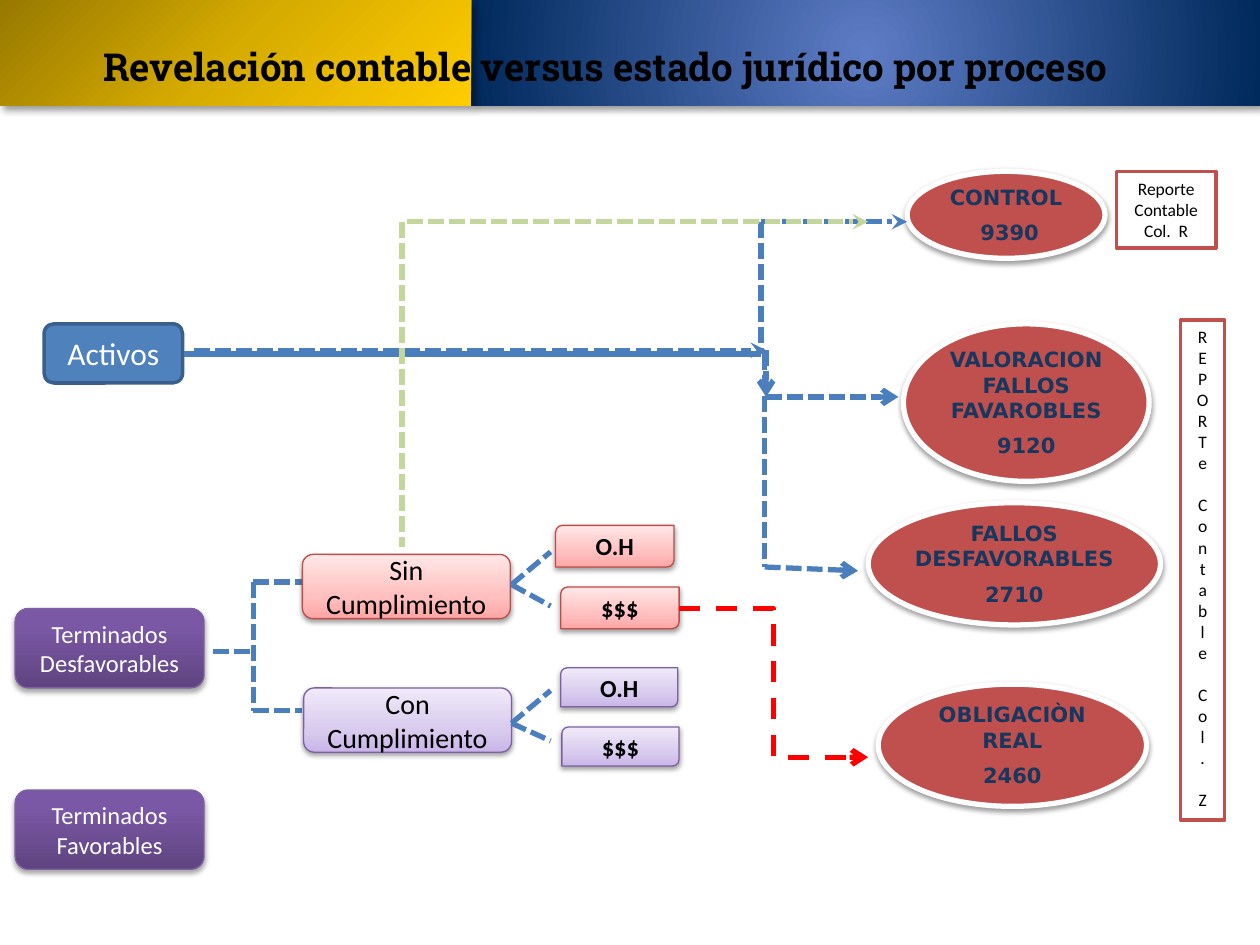
from lxml import etree
from pptx import Presentation
from pptx import util as u
from pptx.dml.color import RGBColor
from pptx.enum import dml, shapes, text
from pptx.oxml.ns import qn

KIND = shapes.MSO_SHAPE
BLUE, GREEN, RED, NAVY, BRICK, PURPLE = "4B7EBC", "C3D69B", "FF0000", "17375E", "C0504D", "7D60A0"
BLACK, WHITE = "000000", "FFFFFF"
PURPLE_FADE = [(0, "5F4480"), (80, "7B58A6"), (100, "7C57A8")]
ROSE_FADE = [(0, "FFA6A5"), (35, "FFC0BF"), (100, "FFE7E7")]
LILAC_FADE = [(0, "C9B5E8"), (35, "D8CBEE"), (100, "F0EAF9")]
SOFT_SHADOW = (38, 3.1, 1.6, 90)  # opacity %, blur pt, distance pt, angle
BAND_SHADOW = (40, 4, 3, 45)


def color(value):
    return RGBColor.from_string(value)


def add_xml(parent, tag, **attributes):
    return etree.SubElement(parent, qn(tag), {key: str(value) for key, value in attributes.items()})


class Diagram:
    font = "Calibri"

    def __init__(self, presentation):
        self.slide = presentation.slides.add_slide(presentation.slide_layouts[5])

    def fade(self, shape, stops, focus=None):
        """Gradient fill: upward, or circular around focus (l, t, r, b in %)."""
        shape.fill.gradient()
        gradient = shape._element.spPr.find(qn("a:gradFill"))
        gradient.clear()
        stop_list = add_xml(gradient, "a:gsLst")
        for position, value in stops:
            stop = add_xml(stop_list, "a:gs", pos=position * 1000)
            add_xml(stop, "a:srgbClr", val=value)
        if focus is None:
            add_xml(gradient, "a:lin", ang=270 * 60000, scaled=0)
        else:
            circle = add_xml(gradient, "a:path", path="circle")
            sides = {side: part * 1000 for side, part in zip("ltrb", focus)}
            add_xml(circle, "a:fillToRect", **sides)

    def shadow(self, shape, opacity, blur, distance, angle):
        effects = shape._element.spPr.find(qn("a:effectLst"))
        outer = add_xml(effects, "a:outerShdw", blurRad=int(u.Pt(blur)), dist=int(u.Pt(distance)),
                        dir=angle * 60000, rotWithShape=0)
        add_xml(add_xml(outer, "a:srgbClr", val=BLACK), "a:alpha", val=opacity * 1000)

    def box(self, kind, place, fill, line=None, width=0.75, shadow=None, focus=None):
        shape = self.slide.shapes.add_shape(kind, *map(u.Inches, place))
        shape.shadow.inherit = False
        if isinstance(fill, str):
            shape.fill.solid()
            shape.fill.fore_color.rgb = color(fill)
        else:
            self.fade(shape, fill, focus)
        if line:
            shape.line.color.rgb = color(line)
            shape.line.width = u.Pt(width)
        else:
            shape.line.fill.background()
        if shadow:
            self.shadow(shape, *shadow)
        return shape

    def label(self, shape, lines, size, ink, bold=False, font=None, middle=True, gaps=None, inset=None):
        """One paragraph per line; gaps maps a line number to its space before."""
        frame = shape.text_frame
        frame.word_wrap = True
        frame.auto_size = text.MSO_AUTO_SIZE.NONE
        frame.vertical_anchor = text.MSO_ANCHOR.MIDDLE if middle else text.MSO_ANCHOR.TOP
        if inset is not None:
            frame.margin_left = frame.margin_right = u.Inches(inset)
            frame.margin_top = frame.margin_bottom = u.Inches(inset)
        for number, line in enumerate(lines):
            paragraph = frame.add_paragraph() if number else frame.paragraphs[0]
            paragraph.alignment = text.PP_ALIGN.CENTER
            if gaps and number in gaps:
                paragraph.space_before = u.Pt(gaps[number])
            run = paragraph.add_run()
            run.text = line
            run.font.name = font or self.font
            run.font.size = u.Pt(size)
            run.font.bold = bold
            run.font.color.rgb = color(ink)

    def title(self, words):
        """Title placeholder, brought in front of the header bands."""
        shape = self.slide.shapes.title
        shape.left, shape.top, shape.width, shape.height = map(u.Inches, (0.72, 0.29, 9.28, 0.47))
        self.label(shape, [words], 22, BLACK, bold=True, font="Roboto Slab", middle=False)
        shape.text_frame.paragraphs[0].alignment = text.PP_ALIGN.LEFT
        self.slide.shapes._spTree.append(shape._element)

    def account(self, place, name, code):
        shape = self.box(KIND.OVAL, place, BRICK, WHITE, 3, SOFT_SHADOW)
        self.label(shape, [name, code], 12, NAVY, True, "DejaVu Sans", False, {1: 6}, 0)

    def node(self, kind, place, words, fill, line, size, ink=BLACK, bold=False, width=0.75,
             shadow=SOFT_SHADOW):
        self.label(self.box(kind, place, fill, line, width, shadow), [words], size, ink, bold)

    def report(self, place, lines, gaps=None):
        shape = self.box(KIND.RECTANGLE, place, WHITE, BRICK, 2)
        self.label(shape, lines, 10, BLACK, middle=False, gaps=gaps)

    def link(self, start, end, ink=BLUE, arrow=None, kind=shapes.MSO_CONNECTOR.STRAIGHT,
             dash=dml.MSO_LINE.SQUARE_DOT, owner=None):
        connector = (owner or self.slide).shapes.add_connector(kind, *map(u.Inches, start + end))
        connector.line.color.rgb = color(ink)
        connector.line.width = u.Pt(3)
        connector.line.dash_style = dash
        properties = connector._element.spPr
        if arrow:
            add_xml(properties.find(qn("a:ln")), "a:tailEnd", type=arrow)
        add_xml(properties, "a:effectLst")

    def route(self, *segments, ink=BLUE):
        """Grouped links, each (start, end) or (start, end, arrow)."""
        group = self.slide.shapes.add_group_shape()
        for start, end, *arrow in segments:
            self.link(start, end, ink, arrow[0] if arrow else None, owner=group)


def main():
    presentation = Presentation()
    presentation.slide_width, presentation.slide_height = u.Inches(10), u.Inches(7.5)
    diagram = Diagram(presentation)

    diagram.box(KIND.RECTANGLE, (3.74, 0, 6.26, 0.84), [(0, "5E7CC5"), (100, "00295C")],
                shadow=BAND_SHADOW, focus=(50, 50, 50, 50))
    diagram.box(KIND.RECTANGLE, (0, 0, 3.74, 0.84), [(0, "977900"), (50, "D7AC00"), (100, "FFCC00")],
                shadow=BAND_SHADOW, focus=(0, 0, 100, 100))

    for place, name, code in [
        ((7.2, 1.36, 1.57, 0.69), "CONTROL", " 9390"),
        ((7.17, 2.57, 1.95, 1.25), "VALORACION FALLOS FAVAROBLES", "9120"),
        ((6.89, 3.99, 2.32, 0.97), "FALLOS DESFAVORABLES", "2710"),
        ((6.97, 5.43, 2.13, 0.97), "OBLIGACIÒN REAL", "2460"),
    ]:
        diagram.account(place, name, code)

    diagram.node(KIND.ROUNDED_RECTANGLE, (0.35, 2.57, 1.1, 0.47), "Activos", "4F81BD", "3A5F8C", 18,
                 WHITE, width=2, shadow=None)
    for top, words in [(4.83, "Terminados Desfavorables"), (6.27, "Terminados Favorables")]:
        diagram.node(KIND.ROUNDED_RECTANGLE, (0.12, top, 1.5, 0.63), words, PURPLE_FADE, PURPLE, 14,
                     WHITE, shadow=(35, 3.1, 1.8, 90))

    diagram.link((1.69, 5.17), (2.01, 5.17))
    diagram.link((2.01, 4.62), (2.01, 5.64))
    for y in (4.62, 5.64):
        diagram.link((2.01, y), (2.4, y))

    for place, words, fade, line, fork, ends, size, leaves in [
        ((2.4, 4.4, 1.65, 0.51), "Sin Cumplimiento", ROSE_FADE, "BF4C48", 4.64, (4.38, 4.81),
         (0.94, 0.33), [("$$$", 4.45, 4.66), ("O.H", 4.41, 4.17)]),
        ((2.41, 5.46, 1.65, 0.51), "Con Cumplimiento", LILAC_FADE, PURPLE, 5.74, (5.48, 5.88),
         (0.93, 0.31), [("O.H", 4.45, 5.3), ("$$$", 4.46, 5.77)]),
    ]:
        diagram.node(KIND.FLOWCHART_ALTERNATE_PROCESS, place, words, fade, line, 16)
        diagram.route(*[((4.06, fork), (4.37, end)) for end in ends])
        for leaf, left, top in leaves:
            diagram.node(KIND.ROUND_2_DIAG_RECTANGLE, (left, top, *size), leaf, fade, line, 14, bold=True)

    diagram.route(((6.07, 4.5), (6.81, 4.53), "arrow"), ((6.07, 2.81), (6.07, 4.5)),
                  ((1.46, 2.81), (6.04, 2.81)))
    diagram.route(((6.08, 3.15), (7.13, 3.15), "arrow"), ((6.08, 2.78), (6.08, 3.15), "arrow"),
                  ((1.54, 2.78), (6.08, 2.78), "stealth"))
    diagram.route(((6.04, 1.76), (6.04, 2.81)), ((6.04, 1.76), (7.2, 1.76), "stealth"),
                  ((6.04, 2.81), (1.54, 2.81)))
    diagram.route(((3.23, 1.76), (6.89, 1.76), "stealth"), ((3.19, 1.76), (3.19, 4.34)), ink=GREEN)
    diagram.link((5.39, 4.83), (6.89, 6.01), RED, "arrow", shapes.MSO_CONNECTOR.ELBOW, dml.MSO_LINE.DASH)

    diagram.report((8.86, 1.36, 0.79, 0.61), ["Reporte Contable Col.  R"])
    letters, gaps = [], {}
    for word in ("REPORTe", "Contable", "Col.", "Z"):
        if letters:
            gaps[len(letters)] = 12
        letters.extend(word)
    diagram.report((9.37, 2.54, 0.35, 3.97), letters, gaps)

    diagram.title("Revelación contable versus estado jurídico por proceso")
    presentation.save("out.pptx")


if __name__ == "__main__":
    main()
